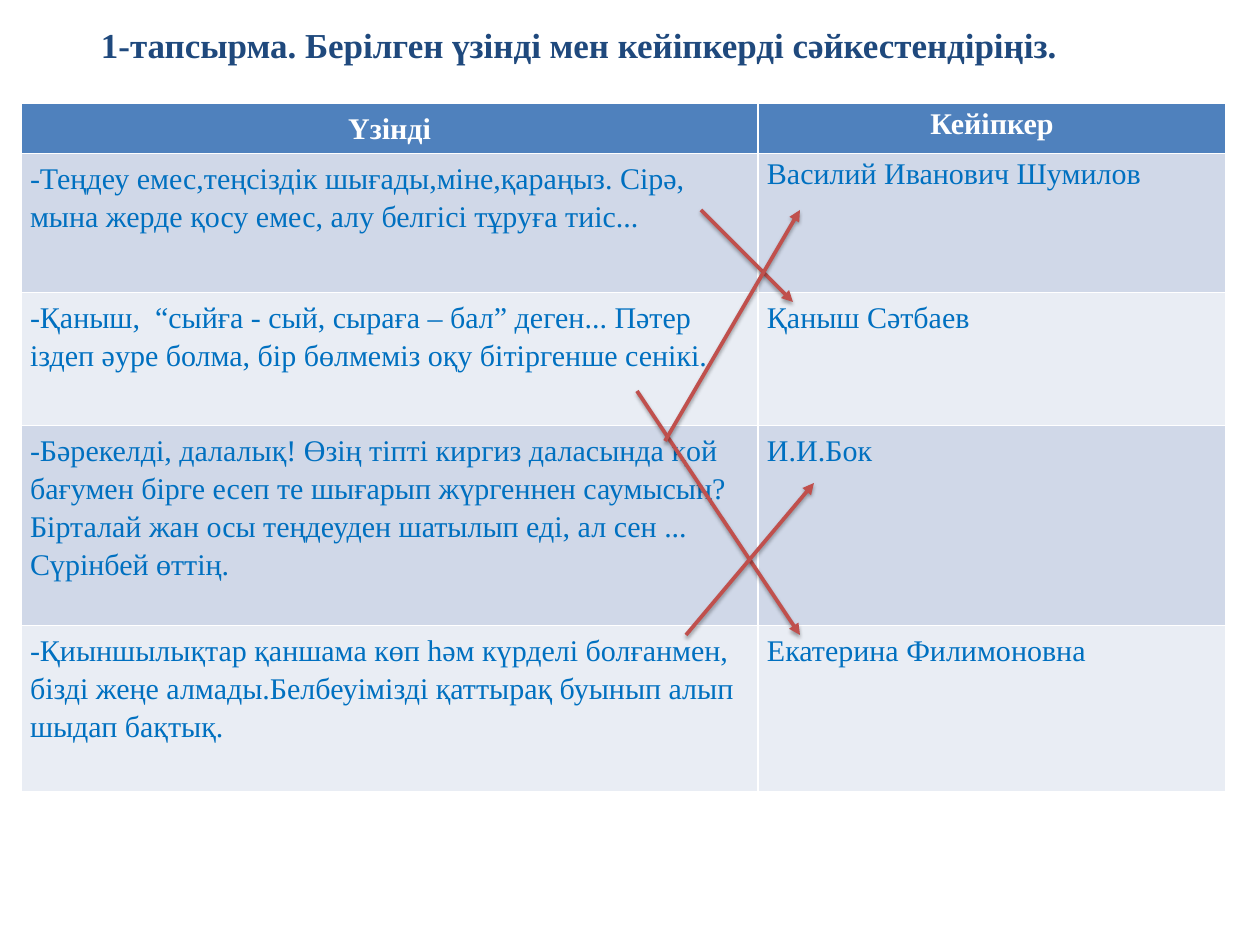
from lxml import etree
from pptx import Presentation
from pptx.dml.color import RGBColor
from pptx.enum.shapes import MSO_CONNECTOR
from pptx.enum.text import MSO_ANCHOR, MSO_AUTO_SIZE, PP_ALIGN
from pptx.oxml import parse_xml
from pptx.oxml.ns import nsdecls, qn
from pptx.util import Pt

PX = 914400 // 90
STRAIGHT = MSO_CONNECTOR.STRAIGHT
TOP = MSO_ANCHOR.TOP
GROW = MSO_AUTO_SIZE.SHAPE_TO_FIT_TEXT
LEFT, CENTER = PP_ALIGN.LEFT, PP_ALIGN.CENTER
COLORS = {
    "title": "1F497D", "header": "4F81BD", "header_text": "FFFFFF",
    "text": "0070C0", "odd": "D0D8E8", "even": "E9EDF4", "arrow": "C0504D",
}
SHADOW = (
    f'<a:effectLst {nsdecls("a")}>'
    '<a:outerShdw blurRad="40000" dist="23000" dir="5400000" rotWithShape="0">'
    '<a:srgbClr val="000000"><a:alpha val="35000"/></a:srgbClr>'
    '</a:outerShdw></a:effectLst>'
)
ROWS = [
    ("Үзінді", "Кейіпкер"),
    ("-Теңдеу емес,теңсіздік шығады,міне,қараңыз. Сірә, мына жерде қосу емес, "
     "алу белгісі тұруға тиіс...", "Василий Иванович Шумилов"),
    ("-Қаныш,  “сыйға - сый, сыраға – бал” деген... Пәтер іздеп әуре болма, "
     "бір бөлмеміз оқу бітіргенше сенікі.", "Қаныш Сәтбаев"),
    ("-Бәрекелді, далалық! Өзің тіпті киргиз даласында қой бағумен бірге есеп "
     "те шығарып жүргеннен саумысың? Бірталай жан осы теңдеуден шатылып еді, "
     "ал сен ... Сүрінбей өттің.", "И.И.Бок"),
    ("-Қиыншылықтар қаншама көп һәм күрделі болғанмен, бізді жеңе "
     "алмады.Белбеуімізді қаттырақ буынып алып шыдап бақтық.",
     "Екатерина Филимоновна"),
]
COL_WIDTHS = (737, 468)
ROW_HEIGHTS = (50, 139, 133, 200, 166)
ARROWS = [
    (701, 210, 793, 302),
    (637, 391, 800, 635),
    (665, 441, 800, 210),
    (686, 635, 814, 483),
]


class Deck:
    """Holds the font, the colours and the current slide."""

    def __init__(self, prs, font="Times New Roman"):
        self.font = font
        self.slide = prs.slides.add_slide(prs.slide_layouts[5])

    def set_text(self, tf, text, size, color, bold=False, align=LEFT):
        tf.text = text
        p = tf.paragraphs[0]
        p.alignment = align
        f = p.runs[0].font
        f.name, f.size, f.bold = self.font, Pt(size), bold
        f.color.rgb = RGBColor.from_string(COLORS[color])
        return p

    def title(self, text, x, y, w, h):
        sp = self.slide.shapes.title
        sp.left, sp.top, sp.width, sp.height = (v * PX for v in (x, y, w, h))
        tf = sp.text_frame
        tf.word_wrap, tf.auto_size, tf.vertical_anchor = True, GROW, TOP
        self.set_text(tf, text, 28, "title", bold=True)

    def table(self, rows, x, y, widths, heights):
        tbl = self.slide.shapes.add_table(
            len(rows), len(widths), x * PX, y * PX,
            sum(widths) * PX, sum(heights) * PX).table
        for col, w in zip(tbl.columns, widths):
            col.width = w * PX
        for i, (row, h) in enumerate(zip(tbl.rows, heights)):
            row.height = h * PX
            head = i == 0
            fill = "header" if head else ("even", "odd")[i % 2]
            for j, cell in enumerate(row.cells):
                cell.fill.solid()
                cell.fill.fore_color.rgb = RGBColor.from_string(COLORS[fill])
                p = self.set_text(cell.text_frame, rows[i][j], 24,
                                  "header_text" if head else "text",
                                  head, CENTER if head else LEFT)
                if j == 0 or i > 1:
                    p.line_spacing, p.space_after = 1.15, Pt(10)

    def arrow(self, x1, y1, x2, y2):
        line = self.slide.shapes.add_connector(
            STRAIGHT, x1 * PX, y1 * PX, x2 * PX, y2 * PX)
        line.line.width = Pt(3)
        line.line.color.rgb = RGBColor.from_string(COLORS["arrow"])
        sp_pr = line.element.spPr
        etree.SubElement(sp_pr.find(qn("a:ln")), qn("a:tailEnd"),
                         type="triangle")
        sp_pr.append(parse_xml(SHADOW))


def main():
    prs = Presentation()
    prs.slide_width, prs.slide_height = 1260 * PX, 945 * PX
    deck = Deck(prs)
    deck.title("1-тапсырма. Берілген үзінді мен кейіпкерді сәйкестендіріңіз.",
               92, 19, 1092, 51)
    deck.table(ROWS, 21, 103, COL_WIDTHS, ROW_HEIGHTS)
    for ends in ARROWS:
        deck.arrow(*ends)
    prs.save("out.pptx")


if __name__ == "__main__":
    main()
